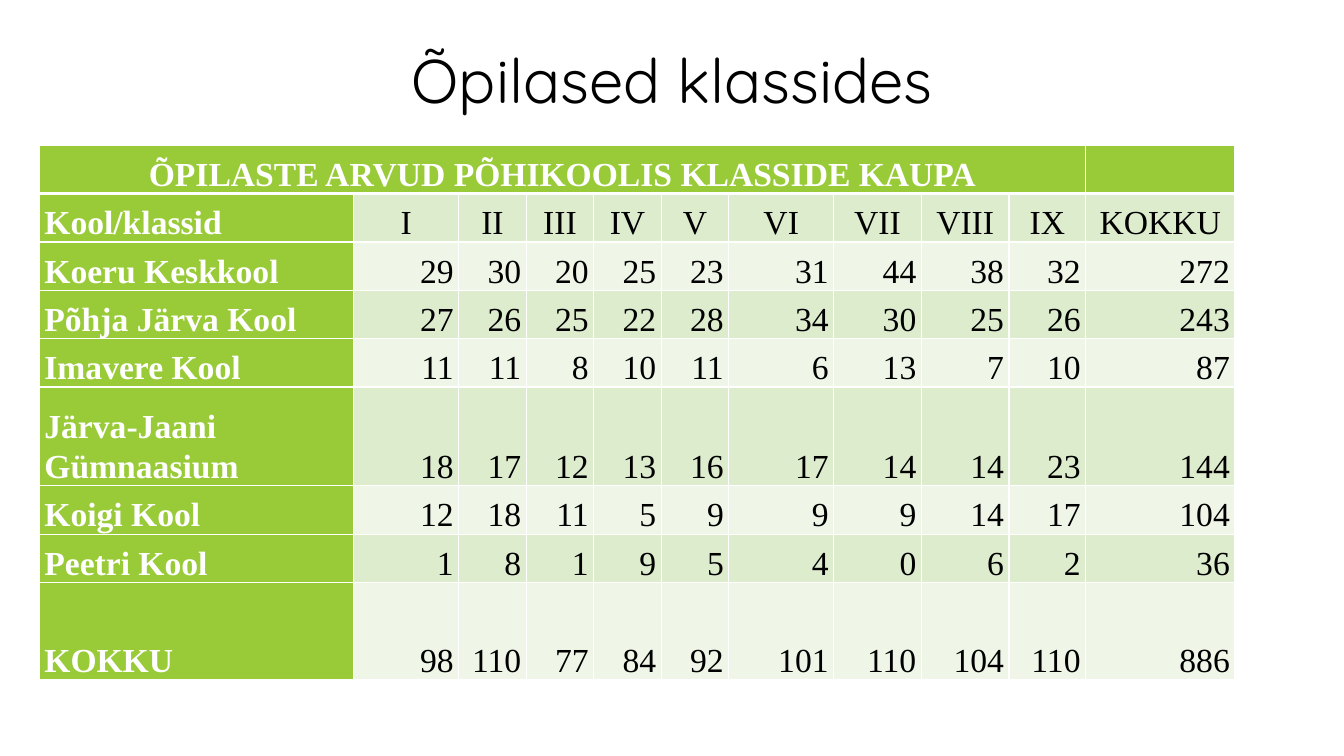
from lxml import etree
from pptx import Presentation
from pptx.dml.color import RGBColor
from pptx.enum.text import MSO_ANCHOR, PP_ALIGN
from pptx.oxml.ns import qn
from pptx.util import Inches, Pt

COLORS = {
    "green": "99CB38",
    "band_dark": "DEECCE",
    "band_light": "EFF6E8",
    "white": "FFFFFF",
    "black": "000000",
}
TITLE_FONT = "Quicksand"
TABLE_FONT = "Times New Roman"

COLUMN_WIDTHS = [3.12, 1.04, 0.67, 0.67, 0.67, 0.67, 1.04, 0.87, 0.87, 0.76, 1.48]
ROW_HEIGHTS = [0.48, 0.48, 0.48, 0.48, 0.48, 0.98, 0.48, 0.48, 0.96]
HEADING = "ÕPILASTE ARVUD PÕHIKOOLIS KLASSIDE KAUPA"
ROWS = [
    ["Kool/klassid", "I", "II", "III", "IV", "V", "VI", "VII", "VIII", "IX", "KOKKU"],
    ["Koeru Keskkool", 29, 30, 20, 25, 23, 31, 44, 38, 32, 272],
    ["Põhja Järva Kool", 27, 26, 25, 22, 28, 34, 30, 25, 26, 243],
    ["Imavere Kool", 11, 11, 8, 10, 11, 6, 13, 7, 10, 87],
    ["Järva-Jaani Gümnaasium", 18, 17, 12, 13, 16, 17, 14, 14, 23, 144],
    ["Koigi Kool", 12, 18, 11, 5, 9, 9, 9, 14, 17, 104],
    ["Peetri Kool", 1, 8, 1, 9, 5, 4, 0, 6, 2, 36],
    ["KOKKU", 98, 110, 77, 84, 92, 101, 110, 104, 110, 886],
]


def rgb(name):
    return RGBColor.from_string(COLORS[name])


def add_span(para, text, font_name, size, color, bold=False):
    span = para.add_run()
    span.text = text
    span.font.name = font_name
    span.font.size = Pt(size)
    span.font.bold = bold
    span.font.color.rgb = rgb(color)


def add_title(page, left, top, width, height):
    box = page.shapes.add_textbox(Inches(left), Inches(top), Inches(width), Inches(height))
    frame = box.text_frame
    frame.word_wrap = True
    frame.vertical_anchor = MSO_ANCHOR.MIDDLE
    para = frame.paragraphs[0]
    para.alignment = PP_ALIGN.CENTER
    para.line_spacing = 0.9
    add_span(para, "Õpilased klassides", TITLE_FONT, 44, "black")


def set_borders(cell, top=1, bottom=1):
    """Draw white cell borders; top and bottom widths are in points."""
    properties = cell._tc.get_or_add_tcPr()
    widths = {"a:lnL": 1, "a:lnR": 1, "a:lnT": top, "a:lnB": bottom}
    for index, (tag, width) in enumerate(widths.items()):
        line = etree.Element(qn(tag), w=str(Pt(width)))
        fill = etree.SubElement(line, qn("a:solidFill"))
        etree.SubElement(fill, qn("a:srgbClr"), val=COLORS["white"])
        properties.insert(index, line)


def paint_cell(cell, fill, top=1, bottom=1):
    cell.fill.solid()
    cell.fill.fore_color.rgb = rgb(fill)
    set_borders(cell, top, bottom)


def write_cell(cell, text, alignment, color, bold):
    cell.vertical_anchor = MSO_ANCHOR.BOTTOM
    cell.margin_left = cell.margin_right = Inches(0.05)
    cell.margin_top = cell.margin_bottom = 0
    para = cell.text_frame.paragraphs[0]
    para.alignment = alignment
    para.line_spacing = 1.07
    para.space_after = Pt(8)
    add_span(para, text, TABLE_FONT, 24, color, bold)


def add_student_table(page, left, top):
    table = page.shapes.add_table(
        len(ROW_HEIGHTS), len(COLUMN_WIDTHS), Inches(left), Inches(top),
        Inches(sum(COLUMN_WIDTHS)), Inches(sum(ROW_HEIGHTS)),
    ).table
    for column, width in zip(table.columns, COLUMN_WIDTHS):
        column.width = Inches(width)
    for row, height in zip(table.rows, ROW_HEIGHTS):
        row.height = Inches(height)

    for cell in table.rows[0].cells:
        paint_cell(cell, "green", bottom=3)
    heading = table.cell(0, 0)
    heading.merge(table.cell(0, len(COLUMN_WIDTHS) - 2))
    write_cell(heading, HEADING, PP_ALIGN.CENTER, "white", True)

    for row_index, values in enumerate(ROWS, start=1):
        band = "band_dark" if row_index % 2 else "band_light"
        top_width = 3 if row_index == 1 else 1
        value_alignment = PP_ALIGN.CENTER if row_index == 1 else PP_ALIGN.RIGHT
        for column_index, value in enumerate(values):
            cell = table.cell(row_index, column_index)
            is_label = column_index == 0
            paint_cell(cell, "green" if is_label else band, top=top_width)
            write_cell(
                cell, str(value),
                PP_ALIGN.LEFT if is_label else value_alignment,
                "white" if is_label else "black", is_label,
            )


def main():
    deck = Presentation()
    deck.slide_width = Inches(13.33)
    deck.slide_height = Inches(7.5)
    page = deck.slides.add_slide(deck.slide_layouts[6])
    add_title(page, 0.92, 0.4, 11.5, 0.86)
    add_student_table(page, 0.39, 1.44)
    deck.save("out.pptx")


if __name__ == "__main__":
    main()
